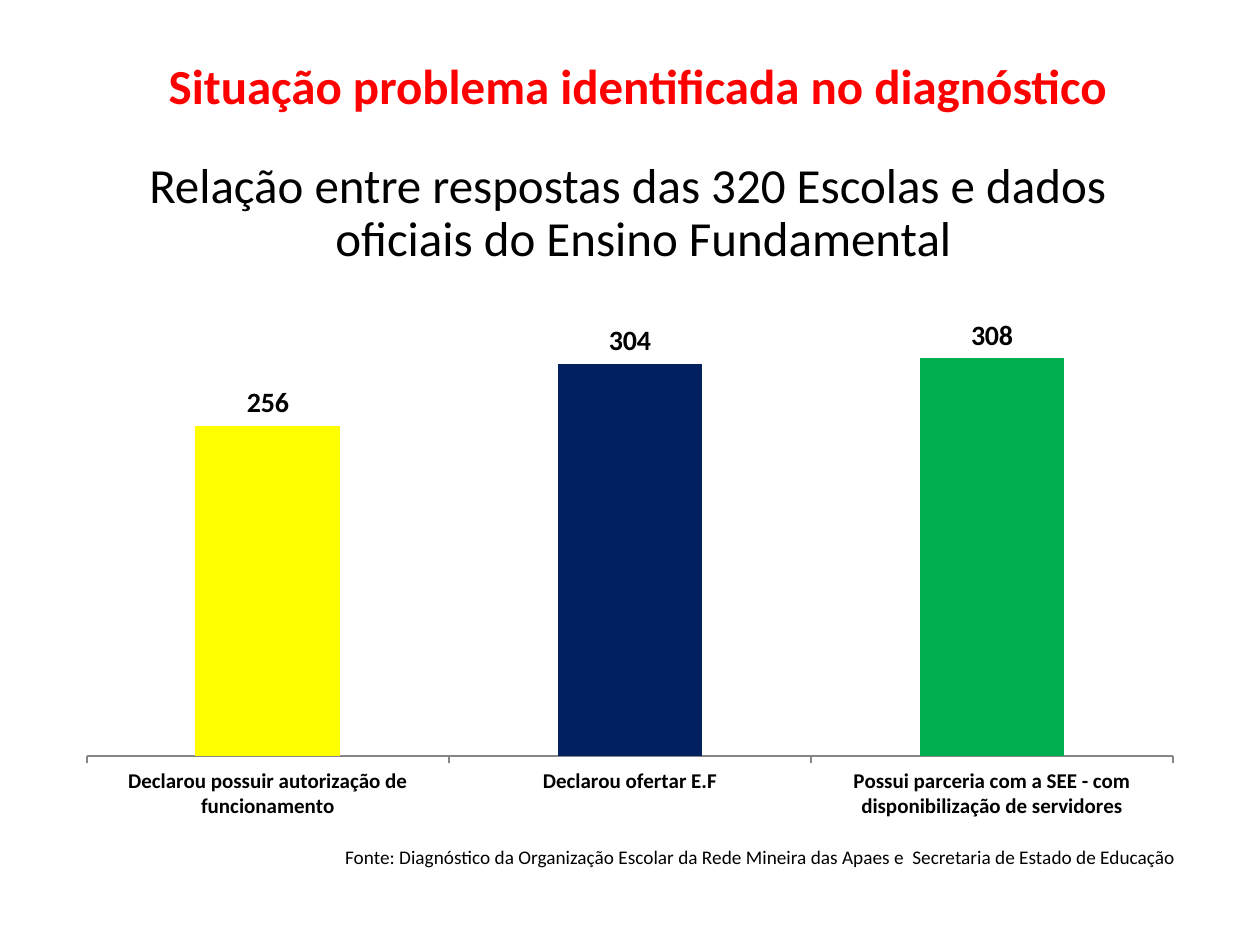
from dataclasses import dataclass

from pptx import Presentation
from pptx.chart.data import CategoryChartData
from pptx.dml.color import RGBColor
from pptx.enum.chart import XL_CHART_TYPE, XL_LABEL_POSITION, XL_TICK_MARK
from pptx.enum.text import MSO_ANCHOR, PP_ALIGN
from pptx.slide import Slide
from pptx.util import Pt


@dataclass(frozen=True)
class Theme:
    face: str = "Calibri"
    ink: str = "000000"
    red: str = "FF0000"
    gray: str = "868686"
    head: float = 28
    value: float = 16
    axis: float = 12
    base: float = 10
    note: float = 11


@dataclass(frozen=True)
class Label:
    text: str
    box: tuple[float, float, float, float]
    size: float
    color: str
    align: PP_ALIGN
    bold: bool = False
    anchor: MSO_ANCHOR = MSO_ANCHOR.TOP
    line: float = 1.0
    hang: float = 0


@dataclass(frozen=True)
class Bar:
    name: str
    value: int
    color: str


THEME = Theme()

LABELS = [
    Label("Relação entre respostas das 320 Escolas e dados oficiais do Ensino Fundamental",
          (48.24, 88.56, 620.64, 359.28), THEME.head, THEME.ink, PP_ALIGN.CENTER,
          line=0.9, hang=18),
    Label("Situação problema identificada no diagnóstico",
          (54, 15.12, 620.64, 71.28), THEME.head, THEME.red, PP_ALIGN.CENTER,
          bold=True, anchor=MSO_ANCHOR.MIDDLE, line=0.9),
    Label("Fonte: Diagnóstico da Organização Escolar da Rede Mineira das Apaes e  "
          "Secretaria de Estado de Educação",
          (190.08, 479.52, 504.72, 20.88), THEME.note, THEME.ink, PP_ALIGN.JUSTIFY),
]

BARS = [
    Bar("Declarou possuir autorização de funcionamento", 256, "FFFF00"),
    Bar("Declarou ofertar E.F", 304, "002060"),
    Bar("Possui parceria com a SEE - com disponibilização de servidores", 308, "00B050"),
]


def apply(target: object, values: dict) -> None:
    for key, value in values.items():
        setattr(target, key, value)


def style(font: object, size: float, color: str, bold: bool = False) -> None:
    apply(font, {"name": THEME.face, "size": Pt(size), "bold": bold})
    font.color.rgb = RGBColor.from_string(color)


def write(slide: Slide, label: Label) -> None:
    frame = slide.shapes.add_textbox(*map(Pt, label.box)).text_frame
    apply(frame, {"word_wrap": True, "vertical_anchor": label.anchor})
    para = frame.paragraphs[0]
    apply(para, {"alignment": label.align, "line_spacing": label.line})
    if label.hang:
        props = para._p.get_or_add_pPr()
        props.set("marL", str(Pt(label.hang)))
        props.set("indent", str(-Pt(label.hang)))
    run = para.add_run()
    run.text = label.text
    style(run.font, label.size, label.color, label.bold)


def plot(slide: Slide, bars: list[Bar], box: tuple[float, ...]) -> None:
    data = CategoryChartData()
    data.categories = [bar.name for bar in bars]
    data.add_series("Series 1", [bar.value for bar in bars])
    chart = slide.shapes.add_chart(
        XL_CHART_TYPE.COLUMN_CLUSTERED, *map(Pt, box), data).chart
    apply(chart, {"has_legend": False, "has_title": False})
    style(chart.font, THEME.base, THEME.ink)

    # Axes
    apply(chart.value_axis, {"visible": False, "has_major_gridlines": False,
                             "minimum_scale": 0, "maximum_scale": 350})
    axis = chart.category_axis
    apply(axis, {"major_tick_mark": XL_TICK_MARK.OUTSIDE, "has_major_gridlines": False})
    style(axis.tick_labels.font, THEME.axis, THEME.ink, True)
    axis.format.line.width = Pt(0.75)
    axis.format.line.color.rgb = RGBColor.from_string(THEME.gray)

    # Columns and their values
    group = chart.plots[0]
    apply(group, {"gap_width": 150, "vary_by_categories": False, "has_data_labels": True})
    tags = group.data_labels
    apply(tags, {"show_value": True, "position": XL_LABEL_POSITION.OUTSIDE_END})
    style(tags.font, THEME.value, THEME.ink, True)
    for index, bar in enumerate(bars):
        fill = group.series[0].points[index].format.fill
        fill.solid()
        fill.fore_color.rgb = RGBColor.from_string(bar.color)


def main() -> None:
    deck = Presentation()
    apply(deck, {"slide_width": Pt(720), "slide_height": Pt(540)})
    slide = deck.slides.add_slide(deck.slide_layouts[6])
    for label in LABELS:
        write(slide, label)
    plot(slide, BARS, (36.72, 167.76, 646.56, 306))
    deck.save("out.pptx")


if __name__ == "__main__":
    main()
